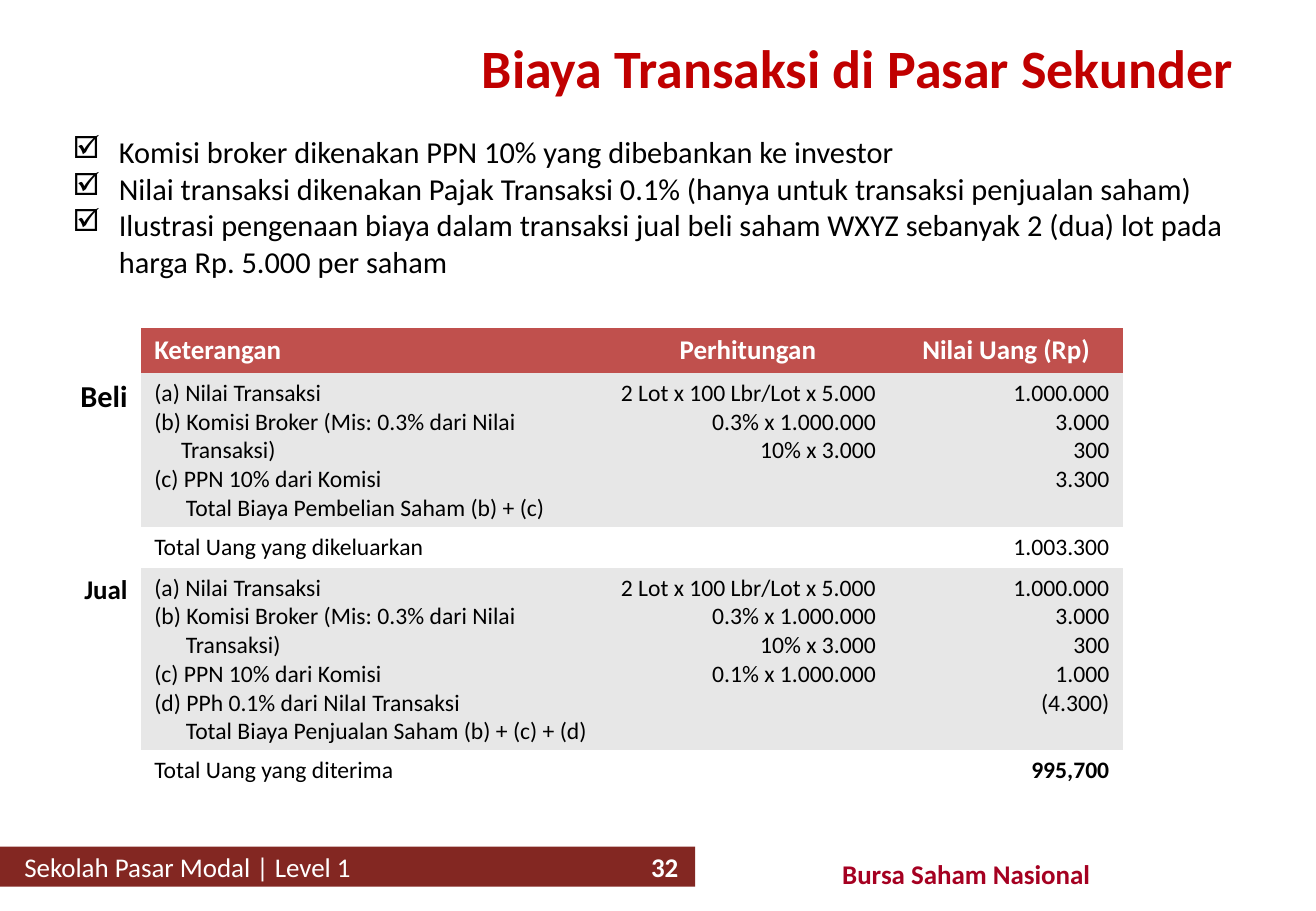
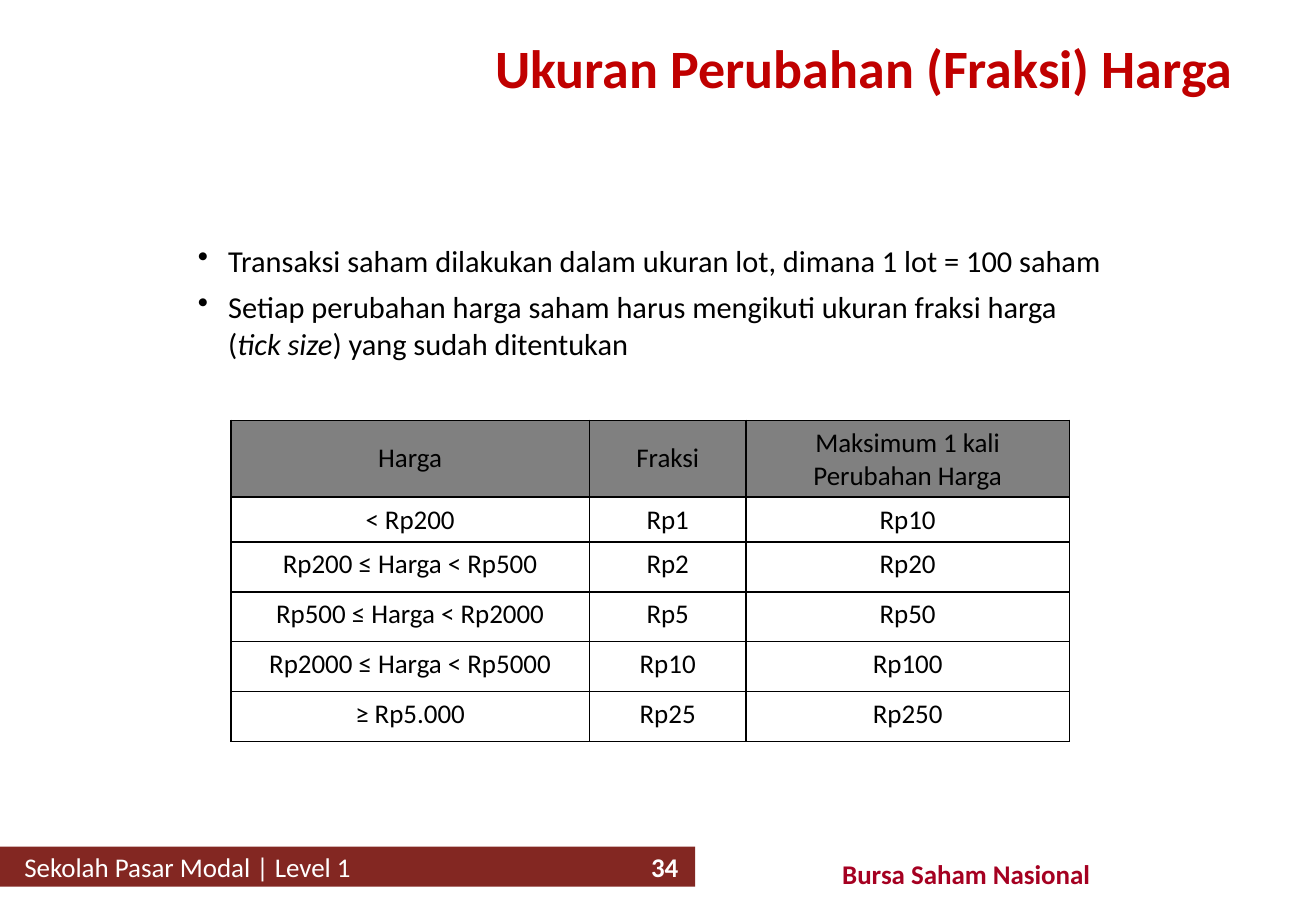
from pptx import Presentation
from pptx.dml.color import RGBColor
from pptx.enum.shapes import MSO_SHAPE as Shape
from pptx.enum.text import MSO_ANCHOR as Anchor, PP_ALIGN as Align
from pptx.oxml.ns import qn
from lxml.etree import SubElement as Sub

PX = 9144  # 100 px to the inch
WIDE, HIGH = 1083, 750
FONT = "Calibri"
BLACK, WHITE = "000000", "FFFFFF"
RED, MAROON, WINE = "C00000", "832722", "A50021"
ROSE, PALE, GRAY = "C0504D", "E7E7E7", "808080"
LEFT, MID, RIGHT = Align.LEFT, Align.CENTER, Align.RIGHT


def px(*vals):
    return [round(val * PX) for val in vals]


def tint(code):
    return RGBColor.from_string(code)


def paint(fill, code):
    if code:
        fill.solid()
        fill.fore_color.rgb = tint(code)
    else:
        fill.background()


def write(par, text, size, color=BLACK, bold=False, italic=False):
    run = par.add_run()
    run.text = text
    font = run.font
    font.name, font.size = FONT, size * 12700
    font.bold, font.italic = bold, italic
    font.color.rgb = tint(color)


def indent(par, left, hang=0):
    props = par._p.get_or_add_pPr()
    props.set("marL", str(left * PX))
    props.set("indent", str(-hang * PX))
    return props


def frame(slide, box, anchor=Anchor.MIDDLE):
    area = slide.shapes.add_textbox(*px(*box)).text_frame
    area.word_wrap = True
    area.vertical_anchor = anchor
    return area


def label(slide, box, text, size, color, align):
    par = frame(slide, box).paragraphs[0]
    par.alignment = align
    write(par, text, size, color, True)


def footer(slide, box, num):
    x, y, w, h = box
    bar = slide.shapes.add_shape(Shape.RECTANGLE, *px(x, y, 572, h))
    bar.shadow.inherit = False
    paint(bar.fill, MAROON)
    bar.line.fill.background()
    area = bar.text_frame
    area.margin_left = px(20)[0]
    area.vertical_anchor = Anchor.MIDDLE
    par = area.paragraphs[0]
    par.alignment = LEFT
    write(par, "Sekolah Pasar Modal | Level 1", 16, WHITE)
    label(slide, (x + 521, y, 52, h), num, 16, WHITE, MID)
    label(slide, (x + 567, y + 4, 340, 37), "Bursa Saham Nasional", 16, WINE, RIGHT)


def base(deck, title, num):
    """Add a blank slide with the shared title and footer."""
    slide = deck.slides.add_slide(deck.slide_layouts[6])
    footer(slide, (0, 697, WIDE, 33), num)
    label(slide, (108, 18, 917, 75), title, 32, RED, RIGHT)
    return slide


def bullets(slide, box, items, mark, hang, after=0):
    """Each item is a list of (text, italic) runs; a None starts a new line."""
    area = frame(slide, box, Anchor.TOP)
    for k, item in enumerate(items):
        par = area.add_paragraph() if k else area.paragraphs[0]
        par.space_after = after * 12700
        Sub(indent(par, hang, hang), qn("a:buChar")).set("char", mark)
        for part in item:
            if part is None:
                par.add_line_break()
            else:
                write(par, part[0], 18, italic=part[1])


def border(cell, color):
    props = cell._tc.get_or_add_tcPr()
    for side in ("lnL", "lnR", "lnT", "lnB"):
        line = Sub(props, qn("a:" + side), w="12700")
        if color:
            solid = Sub(line, qn("a:solidFill"))
            Sub(solid, qn("a:srgbClr"), val=color)
        else:
            Sub(line, qn("a:noFill"))


def grid(slide, spot, cols, rows):
    table = slide.shapes.add_table(
        len(rows), len(cols), *px(*spot, sum(cols), sum(rows))).table
    table.first_row = table.horz_banding = False
    for col, w in zip(table.columns, cols):
        col.width = px(w)[0]
    for row, h in zip(table.rows, rows):
        row.height = px(h)[0]
    return table


def fill_cell(cell, lines, align, size, color=BLACK, bold=False,
              back=None, edge=None, anchor=Anchor.TOP):
    """A line is a string, or an (indent, string) pair."""
    cell.margin_left = cell.margin_right = px(11)[0]
    cell.margin_top = cell.margin_bottom = px(5)[0]
    border(cell, edge)
    paint(cell.fill, back)
    cell.vertical_anchor = anchor
    area = cell.text_frame
    if not lines:
        end = area.paragraphs[0]._p.get_or_add_endParaRPr()
        end.set("sz", str(size * 100))
    for k, line in enumerate(lines):
        par = area.add_paragraph() if k else area.paragraphs[0]
        par.alignment = align
        left, text = (0, line) if isinstance(line, str) else line
        if left:
            indent(par, left)
        write(par, text, size, color, bold)


def costs(slide, spot):
    head = ["Keterangan"], ["Perhitungan"], ["Nilai Uang (Rp)"]
    deal, fee = "(a) Nilai Transaksi", "(b) Komisi Broker (Mis: 0.3% dari Nilai"
    tax = "(c) PPN 10% dari Komisi"
    sums = ["2 Lot x 100 Lbr/Lot x 5.000", "0.3% x 1.000.000", "10% x 3.000"]
    cash = ["1.000.000", "3.000", "300"]
    buy = ([deal, fee, (22, "Transaksi)"), tax,
            (26, "Total Biaya Pembelian Saham (b) + (c)")],
           sums, cash + ["3.300"])
    sell = ([deal, fee, (26, "Transaksi)"), tax,
             "(d) PPh 0.1% dari NilaI Transaksi",
             (26, "Total Biaya Penjualan Saham (b) + (c) + (d)")],
            sums + ["0.1% x 1.000.000"], cash + ["1.000", "(4.300)"])
    paid = ["Total Uang yang dikeluarkan"], [], ["1.003.300"]
    got = ["Total Uang yang diterima"], [], ["995,700"]
    rows = [([], 16, ROSE, head), (["Beli"], 18, PALE, buy),
            ([], 14, WHITE, paid), (["Jual"], 16, PALE, sell),
            ([], 14, WHITE, got)]
    table = grid(slide, spot, (108, 383, 233, 192), (37, 127, 33, 150, 33))
    for r, (side, size, back, cells) in enumerate(rows):
        fill_cell(table.cell(r, 0), side, RIGHT, size, bold=True)
        for c, lines in enumerate(cells):
            cell = table.cell(r, c + 1)
            if r == 0:
                fill_cell(cell, lines, MID if c else LEFT, 16, WHITE, True, back)
            else:
                bold = cells is got and c == 2
                fill_cell(cell, lines, RIGHT if c else LEFT, 14,
                          bold=bold, back=back)


def ticks(slide, spot):
    rows = [("Harga", "Fraksi", "Maksimum 1 kali Perubahan Harga"),
            ("< Rp200", "Rp1", "Rp10"),
            ("Rp200 ≤ Harga < Rp500", "Rp2", "Rp20"),
            ("Rp500 ≤ Harga < Rp2000", "Rp5", "Rp50"),
            ("Rp2000 ≤ Harga < Rp5000", "Rp10", "Rp100"),
            ("≥ Rp5.000", "Rp25", "Rp250")]
    table = grid(slide, spot, (295, 129, 266), [63, 37] + [41] * 4)
    for r, row in enumerate(rows):
        for c, text in enumerate(row):
            fill_cell(table.cell(r, c), [text], MID, 16, edge=BLACK,
                      back=None if r else GRAY,
                      anchor=Anchor.TOP if r else Anchor.MIDDLE)


def main():
    deck = Presentation()
    deck.slide_width, deck.slide_height = px(WIDE, HIGH)

    slide = base(deck, "Biaya Transaksi di Pasar Sekunder", "32")
    notes = ["Komisi broker dikenakan PPN 10% yang dibebankan ke investor",
             "Nilai transaksi dikenakan Pajak Transaksi 0.1% "
             "(hanya untuk transaksi penjualan saham)",
             "Ilustrasi pengenaan biaya dalam transaksi jual beli saham WXYZ "
             "sebanyak 2 (dua) lot pada harga Rp. 5.000 per saham"]
    bullets(slide, (50, 105, 1008, 131), [[(note, False)] for note in notes],
            "☑", 38)
    costs(slide, (8, 270))

    slide = base(deck, "Ukuran Perubahan (Fraksi) Harga", "34")
    rules = [[("Transaksi saham dilakukan dalam ukuran lot, "
               "dimana 1 lot = 100 saham", False)],
             [("Setiap perubahan harga saham harus mengikuti ukuran "
               "fraksi harga", False), None, ("(", False),
              ("tick size", True), (") yang sudah ditentukan", False)]]
    bullets(slide, (153, 194, 822, 109), rules, "•", 25, 6)
    ticks(slide, (190, 346))

    deck.save("out.pptx")


if __name__ == "__main__":
    main()
